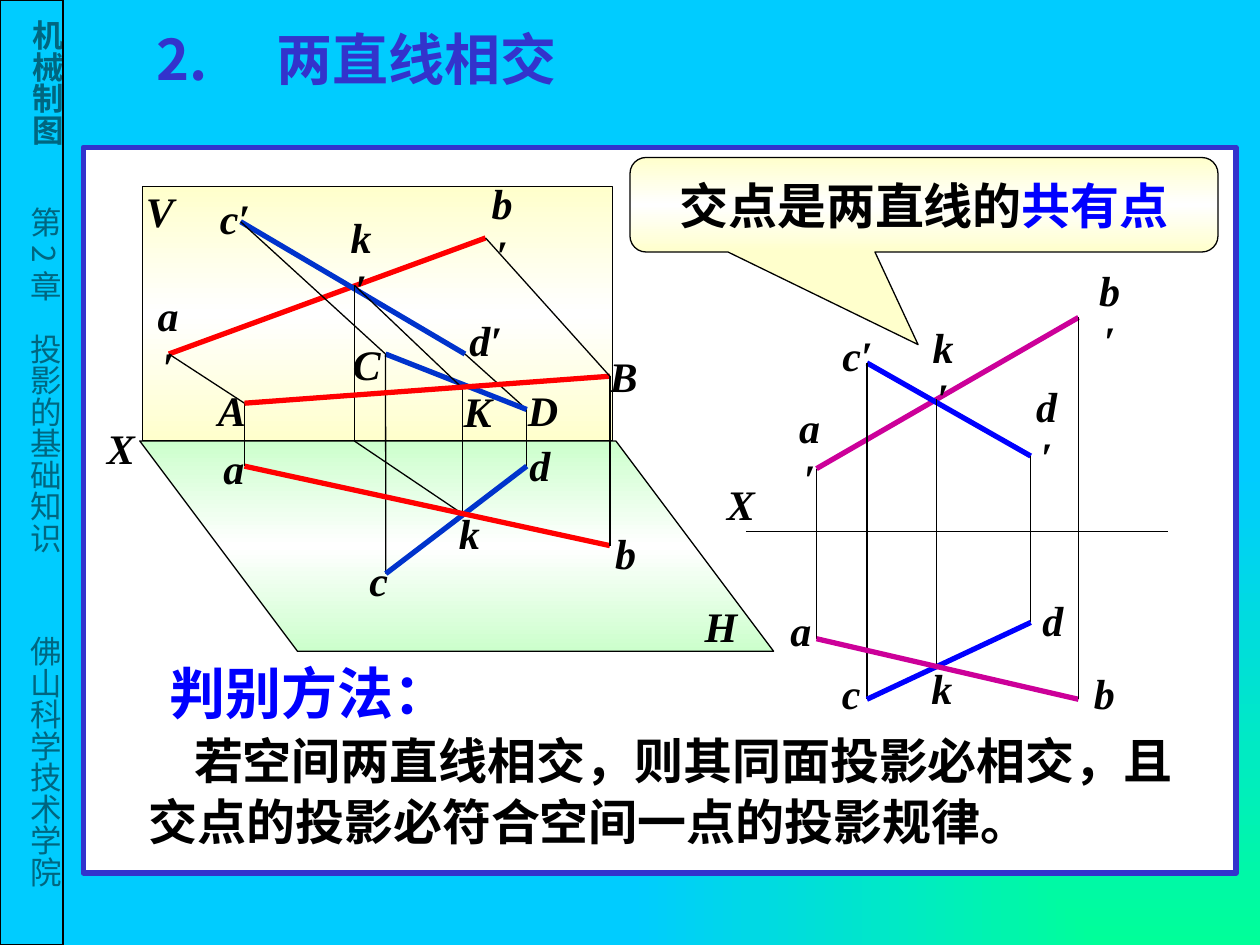
from lxml.etree import SubElement
from pptx import Presentation
from pptx.dml.color import RGBColor
from pptx.enum.shapes import MSO_CONNECTOR, MSO_SHAPE
from pptx.enum.text import MSO_ANCHOR, PP_ALIGN
from pptx.oxml import parse_xml
from pptx.oxml.ns import nsdecls, qn
from pptx.util import Pt

THEME = {
    "black": "000000", "white": "FFFFFF", "sky": "00CCFF", "mint": "00FF99",
    "violet": "3333CC", "blue": "0000FF", "navy": "0033CC", "red": "FF0000",
    "magenta": "CC0099", "cream": "FFFFCC", "pale_green": "CCFFCC",
    "chinese": "Noto Sans CJK SC", "latin": "Times New Roman",
    "heading": 32, "body": 28, "label": 24, "sidebar": 18,
    "thin": 0.75, "thick": 3,
}


def style_run(run, size, color="black", typeface="chinese", bold=True, italic=False):
    font = run.font
    font.size = Pt(THEME[size])
    font.bold = bold
    font.italic = italic
    font.color.rgb = RGBColor.from_string(THEME[color])
    font.name = THEME[typeface]
    east_asian = SubElement(run._r.get_or_add_rPr(), qn("a:ea"))
    east_asian.set("typeface", THEME["chinese"])


def paint_gradient(fill, owner, colors, direction):
    """Fill with evenly spaced colors; direction is the a:lin or a:path element."""
    fill.gradient()
    stops = "".join(
        f'<a:gs pos="{100000 * i // (len(colors) - 1)}"><a:srgbClr val="{THEME[color]}"/></a:gs>'
        for i, color in enumerate(colors))
    gradient = owner.find(".//" + qn("a:gradFill"))
    gradient.getparent().replace(gradient, parse_xml(
        f'<a:gradFill {nsdecls("a")} rotWithShape="1"><a:gsLst>{stops}</a:gsLst>{direction}</a:gradFill>'))


presentation = Presentation()
presentation.slide_width, presentation.slide_height = Pt(720), Pt(540)
slide = presentation.slides.add_slide(presentation.slide_layouts[5])
shapes = slide.shapes
paint_gradient(
    slide.background.fill, slide._element, ["mint", "sky"],
    '<a:path path="rect"><a:fillToRect l="100000" t="100000" r="0" b="0"/></a:path>')

# Sidebar: vertical text under a translucent strip
for text, left, top, height, typeface, bold in [
    ("机械制图", 11.5, 11.5, 80, "latin", True),
    ("第2章　投影的基础知识", 10.5, 118, 215, "chinese", False),
    ("佛山科学技术学院", 10.5, 363.5, 155, "chinese", False),
]:
    box = shapes.add_textbox(Pt(left), Pt(top), Pt(26), Pt(height))
    frame = box.text_frame
    frame.margin_left = frame.margin_right = frame.margin_top = frame.margin_bottom = 0
    frame.word_wrap = True
    frame._txBody.bodyPr.set("vert", "eaVert")
    frame.text = text
    style_run(frame.paragraphs[0].runs[0], "sidebar", typeface=typeface, bold=bold)

# Strip, panel, projection planes and callout
for kind, bounds, colors, line_color, line_width in [
    (MSO_SHAPE.RECTANGLE, (0, 0, 36, 540), ["sky"], "black", "thin"),
    (MSO_SHAPE.RECTANGLE, (47.5, 84.2, 658.8, 414.7), ["white"], "violet", "thick"),
    (MSO_SHAPE.RECTANGLE, (81.4, 106.6, 268.6, 145.4), ["cream", "white", "cream"], "black", "thin"),
    (MSO_SHAPE.PARALLELOGRAM, (79.9, 252, 362.2, 120.2),
     ["pale_green", "white", "pale_green"], "black", "thin"),
    (MSO_SHAPE.ROUNDED_RECTANGULAR_CALLOUT, (360, 90, 336, 54),
     ["cream", "white", "cream"], "black", "thin"),
]:
    shape = shapes.add_shape(kind, *map(Pt, bounds))
    shape.shadow.inherit = False
    shape.line.color.rgb = RGBColor.from_string(THEME[line_color])
    shape.line.width = Pt(THEME[line_width])
    if len(colors) > 1:
        paint_gradient(shape.fill, shape._element, colors, '<a:lin ang="5400000" scaled="1"/>')
    else:
        shape.fill.solid()
        shape.fill.fore_color.rgb = RGBColor.from_string(THEME[colors[0]])
    if colors == ["sky"]:
        SubElement(shape._element.spPr.find(".//" + qn("a:srgbClr")), qn("a:alpha")).set("val", "50000")
    if kind == MSO_SHAPE.PARALLELOGRAM:
        shape.adjustments[0] = 0.75
        shape._element.spPr.xfrm.set("flipH", "1")

callout = shape
for i, adjustment in enumerate([-0.01, 1.48, 0.17]):
    callout.adjustments[i] = adjustment
callout.text_frame.vertical_anchor = MSO_ANCHOR.MIDDLE
callout.text_frame.word_wrap = True
paragraph = callout.text_frame.paragraphs[0]
paragraph.alignment = PP_ALIGN.CENTER
for text, color in [("交点是两直线的", "black"), ("共有点", "blue")]:
    run = paragraph.add_run()
    run.text = text
    style_run(run, "body", color)

# Named points of each drawing, and the lines between them
orthographic = {
    "a′": (466.6, 267.8), "b′": (616.3, 181.4), "c′": (495.4, 207.4), "d′": (589, 260.6),
    "k′": (535, 228.2), "a": (466.6, 365), "b": (616.3, 399.6), "c": (495.4, 399.6),
    "d": (589, 355.7), "k": (535, 380.9), "X": (426.2, 303.8), "O": (667.4, 303.8),
}
orthographic_lines = [
    ("X O", None), ("a′ b′", "magenta"), ("c′ d′", "blue"), ("c′ c", None), ("d′ d", None),
    ("d c", "blue"), ("k′ k", None), ("a′ a", None), ("a b", "magenta"), ("b b′", None),
]
spatial = {
    "a′": (96.5, 202.3), "b′": (277.5, 136), "c′": (137.5, 126.7), "d′": (265.7, 202.3),
    "k′": (202.5, 163), "A": (139.7, 230.4), "B": (348.5, 215), "C": (220.3, 202.3),
    "D": (301, 234), "K": (264.5, 222), "a": (139.7, 266.4), "b": (348.5, 311.8),
    "c": (220.5, 327.8), "d": (301, 266.4), "k": (264.5, 293.8), "axis": (202.5, 252),
}
spatial_lines = [
    ("a′ b′", "red"), ("c′ d′", "navy"), ("d′ D", None), ("c′ C", None), ("C D", "navy"),
    ("C c", None), ("D d", None), ("d c", "navy"), ("k′ axis", None), ("axis k", None),
    ("K k", None), ("k′ K", None), ("a b", "red"), ("a A", None), ("A a′", None),
    ("A B", "red"), ("B b", None), ("B b′", None),
]
for points, lines in [(orthographic, orthographic_lines), (spatial, spatial_lines)]:
    for ends, color in lines:
        start, end = (points[name] for name in ends.split())
        connector = shapes.add_connector(MSO_CONNECTOR.STRAIGHT, *map(Pt, start + end))
        connector.line.color.rgb = RGBColor.from_string(THEME[color or "black"])
        connector.line.width = Pt(THEME["thick" if color else "thin"])
        SubElement(connector._element.spPr, qn("a:effectLst"))

# Point labels, placed by their centres
labels = [
    ("a", 457.6, 360), ("b", 631.1, 396), ("c", 486.4, 396), ("d", 601.6, 354.2),
    ("b′", 634, 180), ("a′", 462.6, 258.5), ("c′", 490, 203), ("d′", 598, 246.2),
    ("k", 538.2, 393.1), ("k′", 538.9, 212.4), ("X", 423.4, 288),
    ("H", 411.8, 357.8), ("V", 91.4, 120.2), ("A", 132.5, 234), ("B", 356.4, 214.6),
    ("C", 209.5, 208.1), ("D", 310.3, 234), ("K", 272.9, 234.7), ("a", 133.6, 267.1),
    ("b", 357.5, 316.1), ("c", 216.4, 331.2), ("d", 308.5, 265.7), ("k", 268.2, 304.6),
    ("a′", 96.1, 194.4), ("b′", 286.9, 130.3), ("c′", 134.3, 124.6), ("k′", 206.3, 149.8),
    ("d′", 277.6, 194.4), ("X", 69.1, 255.6),
]
for text, x, y in labels:
    width = 45 if (text, x) == ("d′", 277.6) else 32.4
    box = shapes.add_textbox(Pt(x - width / 2), Pt(y - 18), Pt(width), Pt(36))
    frame = box.text_frame
    frame.word_wrap = True
    frame.vertical_anchor = MSO_ANCHOR.MIDDLE
    frame.text = text
    frame.paragraphs[0].alignment = PP_ALIGN.CENTER
    style_run(frame.paragraphs[0].runs[0], "label", typeface="latin", italic=True)

# Criterion
for text, bounds, size, color, indent, spacing in [
    ("判别方法：", (90, 372.2, 175, 45.4), "heading", "blue", 0, 40),
    ("若空间两直线相交，则其同面投影必相交，且交点的投影必符合空间一点的投影规律。",
     (77.8, 414, 622, 74.2), "body", "black", 26, 35),
]:
    frame = shapes.add_textbox(*map(Pt, bounds)).text_frame
    frame.word_wrap = True
    frame.vertical_anchor = MSO_ANCHOR.MIDDLE
    frame.text = text
    paragraph = frame.paragraphs[0]
    paragraph.line_spacing = Pt(spacing)
    paragraph._p.get_or_add_pPr().set("indent", str(Pt(indent)))
    style_run(paragraph.runs[0], size, color)

# Title
title = shapes.title
title.left, title.top, title.width, title.height = Pt(82), Pt(15), Pt(499), Pt(38)
title.text_frame.text = "2.　两直线相交"
title.text_frame.vertical_anchor = MSO_ANCHOR.TOP
paragraph = title.text_frame.paragraphs[0]
paragraph.alignment = PP_ALIGN.LEFT
paragraph.line_spacing = 0.9
style_run(paragraph.runs[0], "heading", "violet")

presentation.save("out.pptx")
